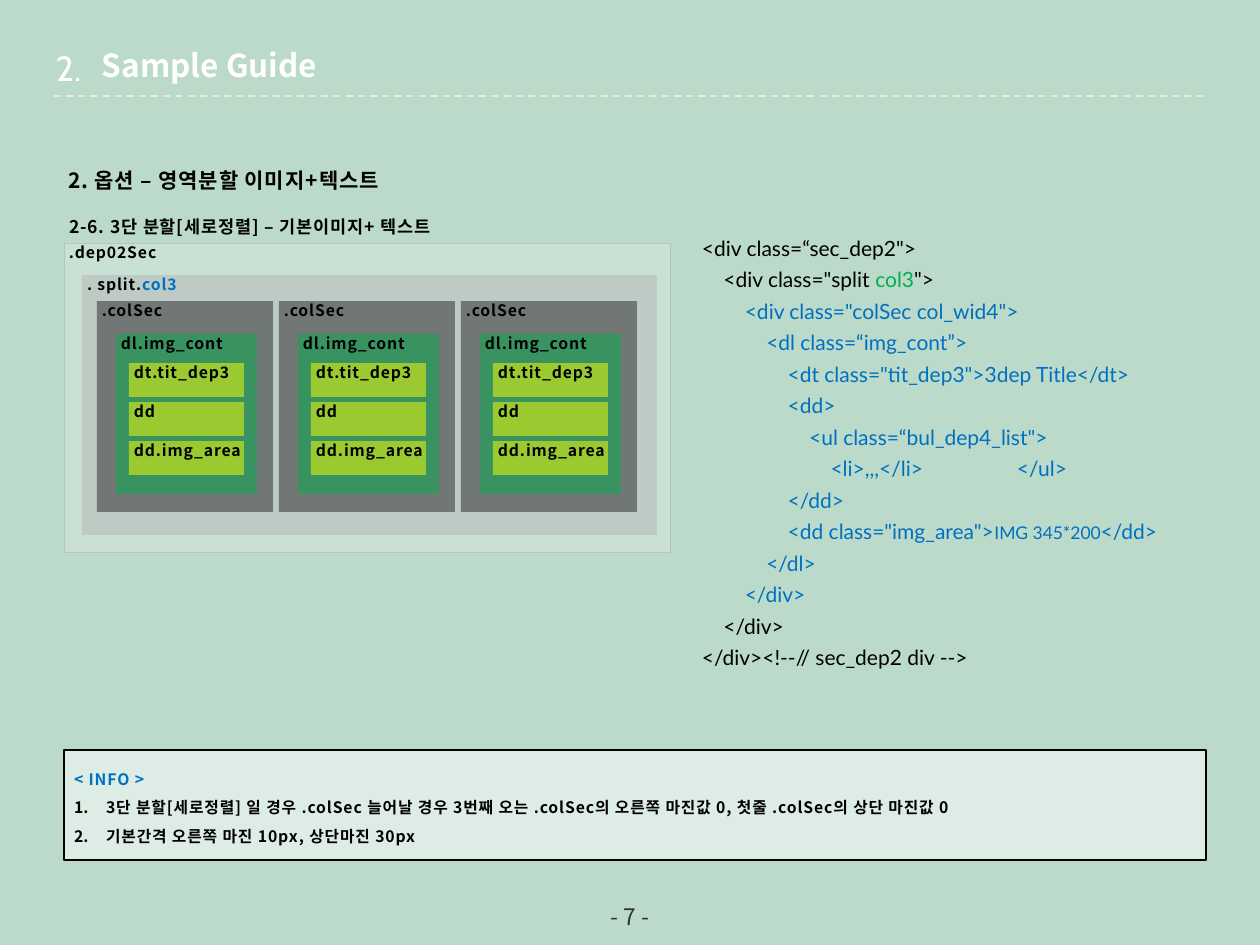
from dataclasses import dataclass

from lxml.etree import SubElement
from pptx import Presentation
from pptx.dml.color import RGBColor
from pptx.enum.dml import MSO_LINE_DASH_STYLE as Dash
from pptx.enum.shapes import MSO_CONNECTOR as Connector, MSO_SHAPE as Shape
from pptx.enum.text import MSO_ANCHOR as Anchor, PP_ALIGN as Align
from pptx.oxml.ns import qn
from pptx.util import Pt

EMU_PER_PX = 914400 / 126


@dataclass(frozen=True)
class Theme:
    background: str = "BBDACA"
    white: str = "FFFFFF"
    black: str = "000000"
    blue: str = "0070C0"
    green: str = "00B050"
    rule: str = "ECE9DA"
    page: str = "333333"
    section_edge: str = "BFBFBF"
    split: str = "B5B5B5"
    column: str = "262626"
    item: str = "FFFF00"
    sans: str = "Noto Sans CJK KR"
    code_font: str = "Lato"
    number_font: str = "Cabin"
    number_size: int = 20
    title_size: int = 18
    page_size: int = 13
    code_size: int = 12
    heading_size: int = 12
    sub_size: int = 10
    label_size: int = 9


THEME = Theme()
LABEL = dict(name=THEME.sans, size=THEME.label_size, color=THEME.black,
             bold=True, spacing=50)
LABEL_INSETS = (5, 0, 0, 0)
TEXT_INSETS = (13, 6, 13, 6)


def px(length):
    return round(length * EMU_PER_PX)


def rgb(color):
    return RGBColor.from_string(color)


def add_run(paragraph, text, name, size, color, bold=False, spacing=None):
    run = paragraph.add_run()
    run.text = text
    for key, value in dict(name=name, size=Pt(size), bold=bold).items():
        setattr(run.font, key, value)
    run.font.color.rgb = rgb(color)
    properties = run.font._element
    SubElement(properties, qn("a:ea"), typeface=name)
    if spacing:
        properties.set("spc", str(spacing))


def set_frame(frame, insets, anchor=Anchor.TOP):
    left, top, right, bottom = map(px, insets)
    values = dict(margin_left=left, margin_top=top, margin_right=right,
                  margin_bottom=bottom, word_wrap=True, vertical_anchor=anchor)
    for key, value in values.items():
        setattr(frame, key, value)


def write_paragraphs(frame, lines, spacing=None, align=Align.LEFT):
    """Each line is a list of (text, run format) pairs."""
    for index, runs in enumerate(lines):
        paragraph = frame.add_paragraph() if index else frame.paragraphs[0]
        paragraph.alignment = align
        paragraph.line_spacing = spacing
        for text, style in runs:
            add_run(paragraph, text, **style)


def add_text(slide, box, lines, insets=TEXT_INSETS, anchor=Anchor.TOP, **layout):
    frame = slide.shapes.add_textbox(*map(px, box)).text_frame
    set_frame(frame, insets, anchor)
    write_paragraphs(frame, lines, **layout)


def add_panel(slide, box, fill, alpha, lines, insets=LABEL_INSETS,
              edge=None, edge_width=0, spacing=None):
    panel = slide.shapes.add_shape(Shape.RECTANGLE, *map(px, box))
    panel.shadow.inherit = False
    panel.fill.solid()
    panel.fill.fore_color.rgb = rgb(fill)
    color = panel._element.spPr.find(qn("a:solidFill"))[0]
    SubElement(color, qn("a:alpha"), val=str(alpha * 1000))
    if edge:
        panel.line.color.rgb = rgb(edge)
        panel.line.width = Pt(edge_width)
    else:
        panel.line.fill.background()
    set_frame(panel.text_frame, insets)
    write_paragraphs(panel.text_frame, lines, spacing)
    return panel


def add_header(slide, box):
    left, top, width, height = box
    rule = slide.shapes.add_connector(
        Connector.STRAIGHT, px(left), px(top + height),
        px(left + width), px(top + height))
    rule.line.color.rgb = rgb(THEME.rule)
    rule.line.width = Pt(1)
    rule.line.dash_style = Dash.DASH
    SubElement(rule._element.spPr, qn("a:effectLst"))
    number = dict(name=THEME.number_font, size=THEME.number_size, color=THEME.white)
    title = dict(name=THEME.sans, size=THEME.title_size, color=THEME.white, bold=True)
    add_text(slide, (left - 20, top, 69, 55), [[("2.", number)]], align=Align.CENTER)
    add_text(slide, (left + 35, top, 581, 50), [[("Sample Guide", title)]])


def add_headings(slide, box):
    left, top, width, _ = box
    heading = LABEL | dict(size=THEME.heading_size)
    subheading = LABEL | dict(size=THEME.sub_size)
    add_text(slide, (left, top, width, 38),
             [[("2. 옵션 – 영역분할 이미지+텍스트", heading)]], LABEL_INSETS, spacing=1.5)
    add_text(slide, (left + 1, top + 50, width, 32),
             [[("2-6. 3단 분할[세로정렬] – 기본이미지+ 텍스트", subheading)]],
             LABEL_INSETS, spacing=1.5)


def add_column(slide, box):
    left, top, width, height = box
    add_panel(slide, box, THEME.column, 50, [[(".colSec", LABEL)]])
    add_panel(slide, (left + 19, top + 33, width - 35, height - 51),
              THEME.green, 50, [[("dl.img_cont", LABEL)]])
    for row, label in enumerate(("dt.tit_dep3", "dd", "dd.img_area")):
        add_panel(slide, (left + 32, top + 62 + 39 * row, 115, 34),
                  THEME.item, 50, [[(label, LABEL)]])


def add_layout_diagram(slide, box):
    left, top, width, height = box
    add_panel(slide, box, THEME.white, 20, [[(".dep02Sec", LABEL)]],
              edge=THEME.section_edge, edge_width=0.25)
    add_panel(slide, (left + 18, top + 32, width - 31, height - 49), THEME.split, 50,
              [[(". split.", LABEL), ("col3", LABEL | dict(color=THEME.blue))]])
    for column in range(3):
        add_column(slide, (left + 33 + 182 * column, top + 58, 176, 211))


def add_code(slide, box):
    black = dict(name=THEME.code_font, size=THEME.code_size, color=THEME.black)
    blue = black | dict(color=THEME.blue)
    green = black | dict(color=THEME.green)
    small = blue | dict(size=THEME.sub_size)
    nested = [
        (0, [('<div class=“sec_dep2">', black)]),
        (1, [('<div class="split ', black), ("col3", green), ('">', black)]),
        (2, [('<div class="colSec col_wid4">', blue)]),
        (3, [("<dl class=“img_cont”>", blue)]),
        (4, [('<dt class="tit_dep3">3dep Title</dt>', blue)]),
        (4, [("<dd>", blue)]),
        (5, [('<ul class=“bul_dep4_list">', blue)]),
        (6, [("<li>,,,</li>\t\t</ul>", blue)]),
        (4, [("</dd>", blue)]),
        (4, [('<dd class="img_area">', blue), ("IMG 345*200", small), ("</dd>", blue)]),
        (3, [("</dl>", blue)]),
        (2, [("</div>", blue)]),
        (1, [("</div>", black)]),
        (0, [("</div><!--// sec_dep2 div -->", black)]),
    ]
    lines = [[("    " * depth + first, style), *rest]
             for depth, ((first, style), *rest) in nested]
    add_text(slide, box, lines, spacing=Pt(18))


def add_info(slide, box):
    lines = [
        [("< INFO >", LABEL | dict(color=THEME.blue))],
        [("3단 분할[세로정렬] 일 경우 .colSec 늘어날 경우 3번째 오는 .colSec의 오른쪽 마진값 0, "
          "첫줄 .colSec의 상단 마진값 0", LABEL)],
        [("기본간격 오른쪽 마진 10px, 상단마진 30px", LABEL)],
    ]
    info = add_panel(slide, box, THEME.white, 50, lines, (10, 10, 10, 0),
                     THEME.black, 0.75, spacing=1.5)
    for paragraph in info.text_frame.paragraphs[1:]:
        properties = paragraph._p.get_or_add_pPr()
        properties.set("marL", str(px(32)))
        properties.set("indent", str(-px(32)))
        SubElement(properties, qn("a:buAutoNum"), type="arabicPeriod")


def add_page_number(slide, box):
    style = dict(name=THEME.sans, size=THEME.page_size, color=THEME.page)
    add_text(slide, box, [[("- 7 -", style)]], (0, 0, 0, 0), Anchor.MIDDLE,
             align=Align.CENTER)


def main():
    deck = Presentation()
    deck.slide_width, deck.slide_height = px(1260), px(945)
    slide = deck.slides.add_slide(deck.slide_layouts[6])
    slide.background.fill.solid()
    slide.background.fill.fore_color.rgb = rgb(THEME.background)
    add_header(slide, (54, 40, 1152, 56))
    add_headings(slide, (63, 155, 410, 82))
    add_layout_diagram(slide, (64, 243, 606, 309))
    add_code(slide, (689, 223, 536, 490))
    add_info(slide, (64, 750, 1142, 110))
    add_page_number(slide, (483, 897, 294, 39))
    deck.save("out.pptx")


if __name__ == "__main__":
    main()
